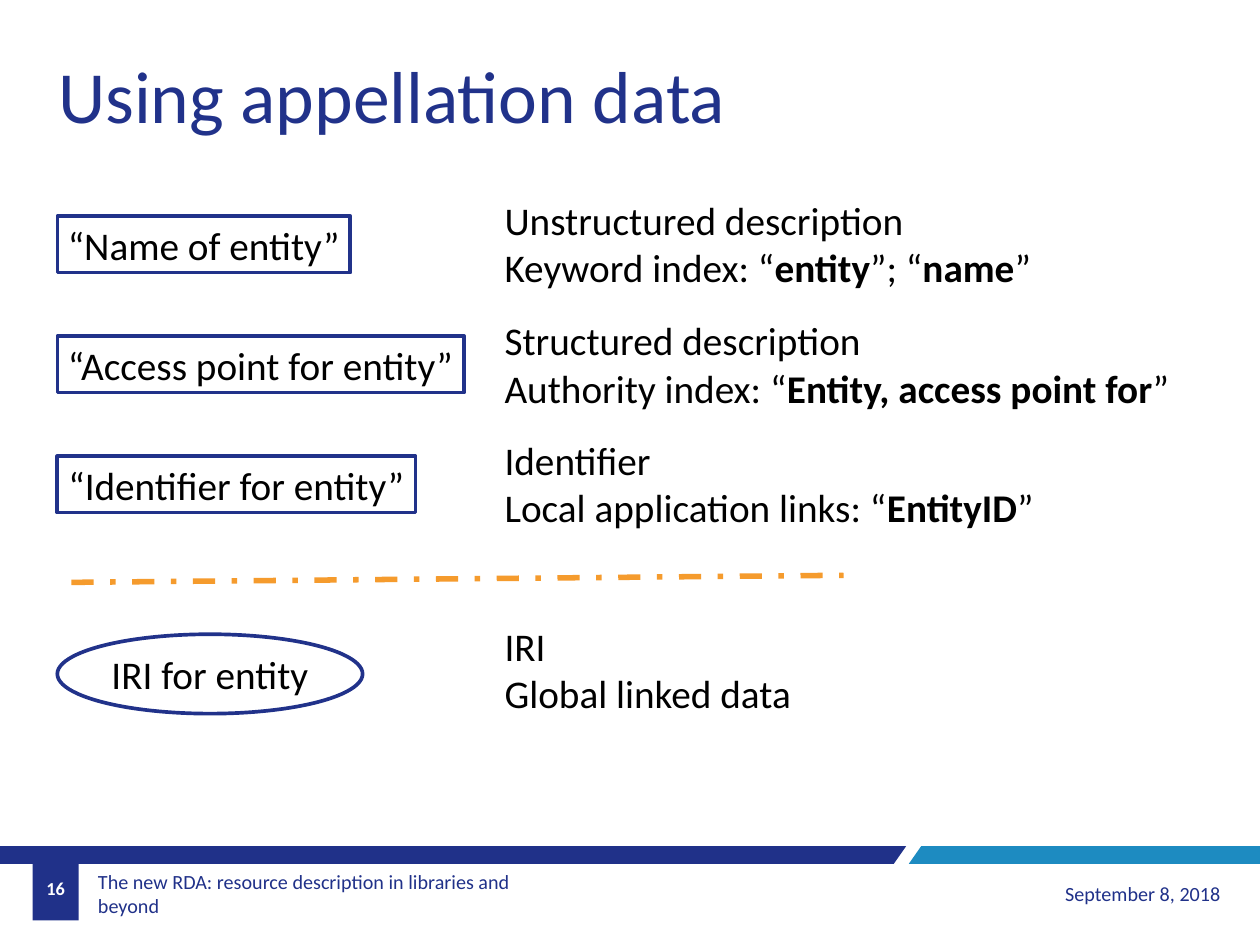
from dataclasses import dataclass

from lxml import etree
from pptx import Presentation
from pptx import util as u
from pptx.dml.color import RGBColor
from pptx.enum import dml, shapes, text
from pptx.oxml.ns import qn

WIDTH, HEIGHT = 14.28, 10.71
NAVY, INK_BLUE, SKY, ORANGE = "203189", "21328A", "1D8BC1", "F59B2D"
BLACK, WHITE = "000000", "FFFFFF"
FONT = "Calibri"

LABEL_X, NOTE_X = 0.65, 5.62
FIRST_ROW, ROW = 2.77, 1.36  # centre of the first row and row pitch
NOTE_H = 1.18
BAND_Y, BAND_H = 9.59, 0.2
FOOTER_Y, FOOTER_H = 9.85, 0.55

Box = tuple[float, float, float, float]
Runs = list[tuple[str, bool]]


@dataclass
class Appellation:
    label: str
    kind: shapes.MSO_SHAPE
    label_size: tuple[float, float]
    row: float
    note: list[Runs]
    note_width: float
    label_drop: float = 0


@dataclass
class FooterText:
    words: str
    box: Box
    size: float
    color: str
    align: text.PP_ALIGN
    bold: bool = False
    inset: tuple[float, float] = (0.1, 0.05)


RECT, OVAL = shapes.MSO_SHAPE.RECTANGLE, shapes.MSO_SHAPE.OVAL
LEFT, CENTER, RIGHT = text.PP_ALIGN.LEFT, text.PP_ALIGN.CENTER, text.PP_ALIGN.RIGHT

APPELLATIONS = [
    Appellation("“Name of entity”", RECT, (3.32, 0.64), 0,
                [[("Unstructured description", False)],
                 [("Keyword index: “", False), ("entity", True), ("”; “", False),
                  ("name", True), ("”", False)]], 6.22),
    Appellation("“Access point for entity”", RECT, (4.61, 0.64), 1,
                [[("Structured description", False)],
                 [("Authority index: “", False), ("Entity, access point for", True),
                  ("”", False)]], 7.81),
    Appellation("“Identifier for entity”", RECT, (4.06, 0.64), 2,
                [[("Identifier", False)],
                 [("Local application links: “", False), ("EntityID", True),
                  ("”", False)]], 6.26),
    Appellation("IRI for entity", OVAL, (3.46, 0.9), 3.55,
                [[("IRI", False)], [("Global linked data", False)]], 3.49, 0.04),
]

FOOTERS = [
    FooterText("The new RDA: resource description in libraries and beyond",
               (1.04, FOOTER_Y, 5.52, FOOTER_H), 16.4, NAVY, LEFT, inset=(0.07, 0.04)),
    FooterText("September 8, 2018", (10.27, FOOTER_Y, 3.66, FOOTER_H), 16.4, NAVY, RIGHT),
    FooterText("16", (0.37, BAND_Y + BAND_H, 0.52, FOOTER_H), 14.9, WHITE, CENTER, True),
]

BANDS = [
    (NAVY, [(10.27, 0), (0, 0), (0, BAND_H), (10.13, BAND_H)]),
    (SKY, [(WIDTH, 0), (10.44, 0), (10.3, BAND_H), (WIDTH, BAND_H)]),
]


def rgb(color: str) -> RGBColor:
    return RGBColor.from_string(color)


def inches(*lengths: float) -> list[int]:
    return [u.Inches(x) for x in lengths]


def style(p, size: float, color: str, align=LEFT) -> None:
    p.alignment = align
    p.font.size = u.Pt(size)
    p.font.name = FONT
    p.font.color.rgb = rgb(color)


def paint(sp, fill: str, line: str | None = None) -> None:
    sp.shadow.inherit = False
    sp.fill.solid()
    sp.fill.fore_color.rgb = rgb(fill)
    if line:
        sp.line.color.rgb = rgb(line)
        sp.line.width = u.Pt(3)
    else:
        sp.line.fill.background()


def add_title(s, words: str) -> None:
    sp = s.shapes.title
    sp.left, sp.top, sp.width, sp.height = inches(0.56, 0.52, 7.87, 1.11)
    tf = sp.text_frame
    tf.text = words
    tf.word_wrap = False
    tf.auto_size = text.MSO_AUTO_SIZE.NONE
    tf.vertical_anchor = text.MSO_ANCHOR.TOP
    style(tf.paragraphs[0], 60, INK_BLUE)


def add_bands(s) -> None:
    for color, points in BANDS:
        corners = [inches(x, BAND_Y + y) for x, y in points]
        builder = s.shapes.build_freeform(*corners[0])
        builder.add_line_segments(corners[1:], close=True)
        paint(builder.convert_to_shape(), color)
    paint(s.shapes.add_shape(RECT, *inches(0.37, BAND_Y, 0.52, 0.84)), NAVY)


def add_footer(s, item: FooterText) -> None:
    tf = s.shapes.add_textbox(*inches(*item.box)).text_frame
    tf.word_wrap = True
    tf.vertical_anchor = text.MSO_ANCHOR.MIDDLE
    tf.margin_left = tf.margin_right = u.Inches(item.inset[0])
    tf.margin_top = tf.margin_bottom = u.Inches(item.inset[1])
    p = tf.paragraphs[0]
    p.text = item.words
    style(p, item.size, item.color, item.align)
    p.font.bold = item.bold


def add_label(s, item: Appellation) -> None:
    w, h = item.label_size
    top = FIRST_ROW + item.row * ROW + item.label_drop - h / 2
    sp = s.shapes.add_shape(item.kind, *inches(LABEL_X, top, w, h))
    paint(sp, WHITE, INK_BLUE)
    tf = sp.text_frame
    tf.word_wrap = False
    tf.text = item.label
    style(tf.paragraphs[0], 32, BLACK, CENTER)


def add_note(s, item: Appellation) -> None:
    top = FIRST_ROW + item.row * ROW - NOTE_H / 2
    tf = s.shapes.add_textbox(*inches(NOTE_X, top, item.note_width, NOTE_H)).text_frame
    tf.word_wrap = False
    for i, runs in enumerate(item.note):
        p = tf.add_paragraph() if i else tf.paragraphs[0]
        style(p, 32, BLACK)
        for words, bold in runs:
            r = p.add_run()
            r.text = words
            r.font.bold = bold


def add_divider(s) -> None:
    line = s.shapes.add_connector(shapes.MSO_CONNECTOR.STRAIGHT,
                                  *inches(0.81, 6.6, 9.56, 6.52))
    line.line.color.rgb = rgb(ORANGE)
    line.line.width = u.Pt(4.5)
    line.line.dash_style = dml.MSO_LINE.DASH_DOT
    etree.SubElement(line._element.spPr, qn("a:effectLst"))


def main() -> None:
    prs = Presentation()
    prs.slide_width, prs.slide_height = inches(WIDTH, HEIGHT)
    s = prs.slides.add_slide(prs.slide_layouts.get_by_name("Title Only"))
    add_title(s, "Using appellation data")
    add_bands(s)
    for footer in FOOTERS:
        add_footer(s, footer)
    for item in APPELLATIONS:
        add_label(s, item)
        add_note(s, item)
    add_divider(s)
    prs.save("out.pptx")


if __name__ == "__main__":
    main()
